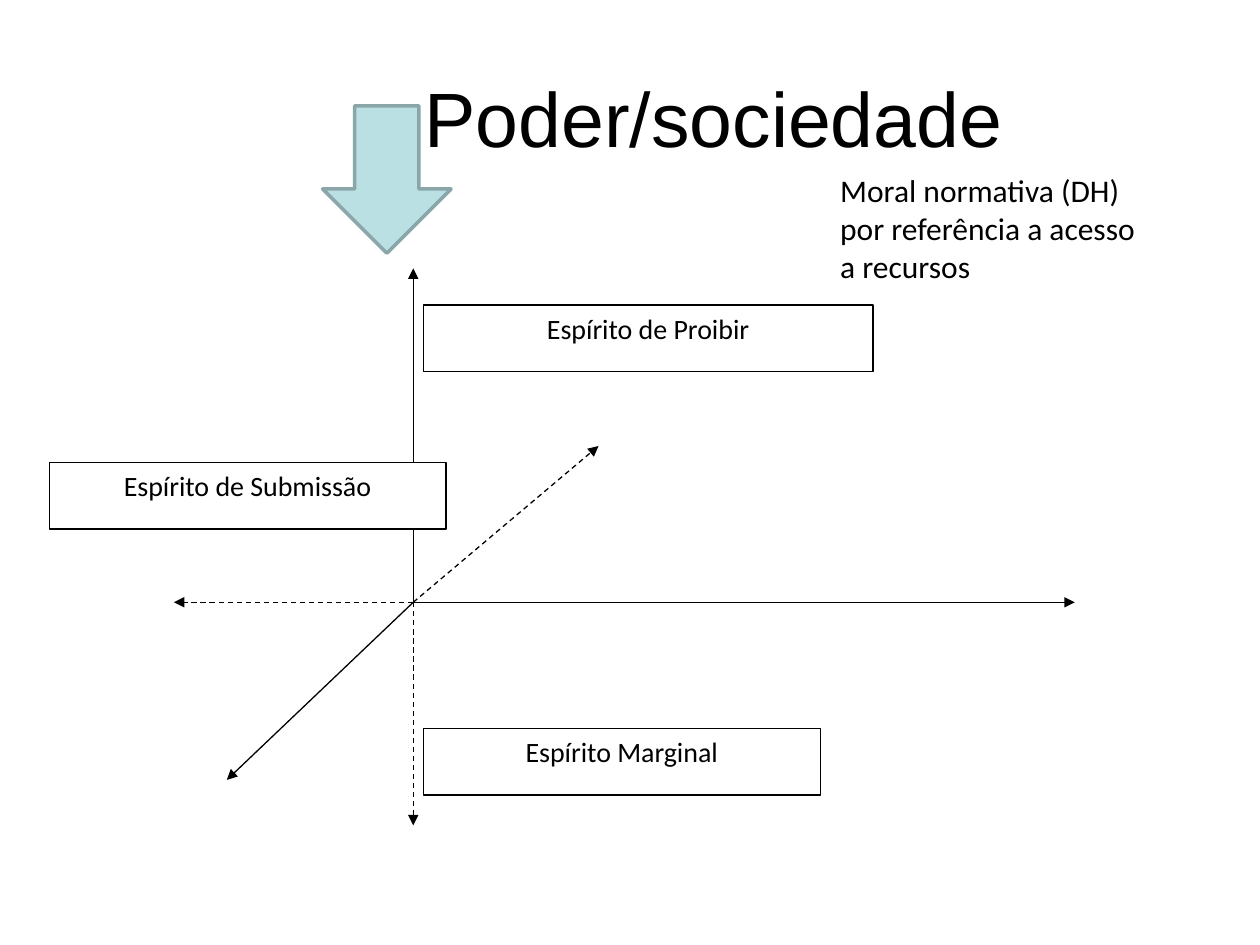
from lxml.etree import SubElement
from pptx import Presentation
from pptx.dml.color import RGBColor
from pptx.enum.dml import MSO_LINE
from pptx.enum.shapes import MSO_CONNECTOR, MSO_SHAPE
from pptx.enum.text import MSO_ANCHOR, PP_ALIGN
from pptx.oxml.ns import qn
from pptx.util import Inches, Pt

COLUMNS, ROWS = 100, 75
SLIDE_WIDTH, SLIDE_HEIGHT = Inches(10), Inches(7.5)
BLACK, WHITE = "000000", "FFFFFF"
ARROW_FILL, ARROW_LINE = "BBE0E3", "8AA6A8"


def color(value):
    """Turn a hex string into a colour."""
    return RGBColor.from_string(value)


def grid(*values):
    """Turn alternating columns and rows into slide lengths."""
    units = (SLIDE_WIDTH / COLUMNS, SLIDE_HEIGHT / ROWS)
    return [round(value * units[index % 2]) for index, value in enumerate(values)]


def write_text(shape, text, size, font_name, alignment, anchor=MSO_ANCHOR.TOP):
    """Put one formatted paragraph into a shape."""
    frame = shape.text_frame
    frame.word_wrap = True
    frame.vertical_anchor = anchor
    frame.text = text
    paragraph = frame.paragraphs[0]
    paragraph.alignment = alignment
    font = paragraph.runs[0].font
    font.size, font.name = Pt(size), font_name
    font.color.rgb = color(BLACK)


def add_box(slide, kind, box, fill, line, line_width):
    """Add a filled, outlined shape without a shadow."""
    shape = slide.shapes.add_shape(kind, *grid(*box))
    shape.shadow.inherit = False
    shape.fill.solid()
    shape.fill.fore_color.rgb = color(fill)
    shape.line.color.rgb = color(line)
    shape.line.width = Pt(line_width)
    return shape


def add_title(slide, box, indent, text):
    """Add the title, centred in the part of its box right of the indent."""
    title = slide.shapes.add_textbox(*grid(*box))
    write_text(title, text, 44, "Arial", PP_ALIGN.CENTER, MSO_ANCHOR.MIDDLE)
    title.text_frame.margin_left = grid(indent)[0]


def add_axis(slide, start, end, dashed):
    """Add one axis with an arrowhead at its end."""
    axis = slide.shapes.add_connector(MSO_CONNECTOR.STRAIGHT, *grid(*start, *end))
    axis.line.color.rgb = color(BLACK)
    axis.line.width = Pt(0.75)
    if dashed:
        axis.line.dash_style = MSO_LINE.DASH
    properties = axis._element.spPr
    SubElement(properties.find(qn("a:ln")), qn("a:tailEnd"), type="triangle")
    SubElement(properties, qn("a:effectLst"))


def add_axes(slide, box, origin, diagonals):
    """Draw three solid and three dashed axes from the origin to the edges of the box."""
    left, top, width, height = box
    across, down = origin
    solid_ends = [(across, top), diagonals[0], (left + width, down)]
    dashed_ends = [(across, top + height), (left, down), diagonals[1]]
    for dashed, ends in ((False, solid_ends), (True, dashed_ends)):
        for end in ends:
            add_axis(slide, origin, end, dashed)


def add_label(slide, box, text):
    """Add a framed label for an axis."""
    label = add_box(slide, MSO_SHAPE.RECTANGLE, box, WHITE, BLACK, 0.75)
    write_text(label, text, 16, "Calibri", PP_ALIGN.CENTER)


def add_note(slide, box, text):
    """Add the unframed note."""
    note = slide.shapes.add_textbox(*grid(*box))
    write_text(note, text, 18, "Calibri", PP_ALIGN.LEFT)


def main():
    """Build and save the slide."""
    presentation = Presentation()
    presentation.slide_width, presentation.slide_height = SLIDE_WIDTH, SLIDE_HEIGHT
    slide = presentation.slides.add_slide(presentation.slide_layouts[6])

    add_title(slide, (5, 3, 90, 12.5), 14.3, "Poder/sociedade")
    add_axes(slide, (13.8, 21.3, 71.5, 44.2), (32.8, 47.8), [(18, 61.9), (47.5, 35.4)])
    add_label(slide, (3.9, 36.7, 31.5, 5.3), "Espírito de Submissão")
    add_label(slide, (33.6, 24.2, 35.7, 5.3), "Espírito de Proibir")
    add_box(slide, MSO_SHAPE.DOWN_ARROW, (25.6, 8.4, 10.2, 11.7), ARROW_FILL, ARROW_LINE, 2)
    add_label(slide, (33.6, 57.8, 31.5, 5.3), "Espírito Marginal")
    add_note(slide, (65.7, 13.1, 25.8, 10.1),
             "Moral normativa (DH) por referência a acesso a recursos")

    presentation.save("out.pptx")


if __name__ == "__main__":
    main()
